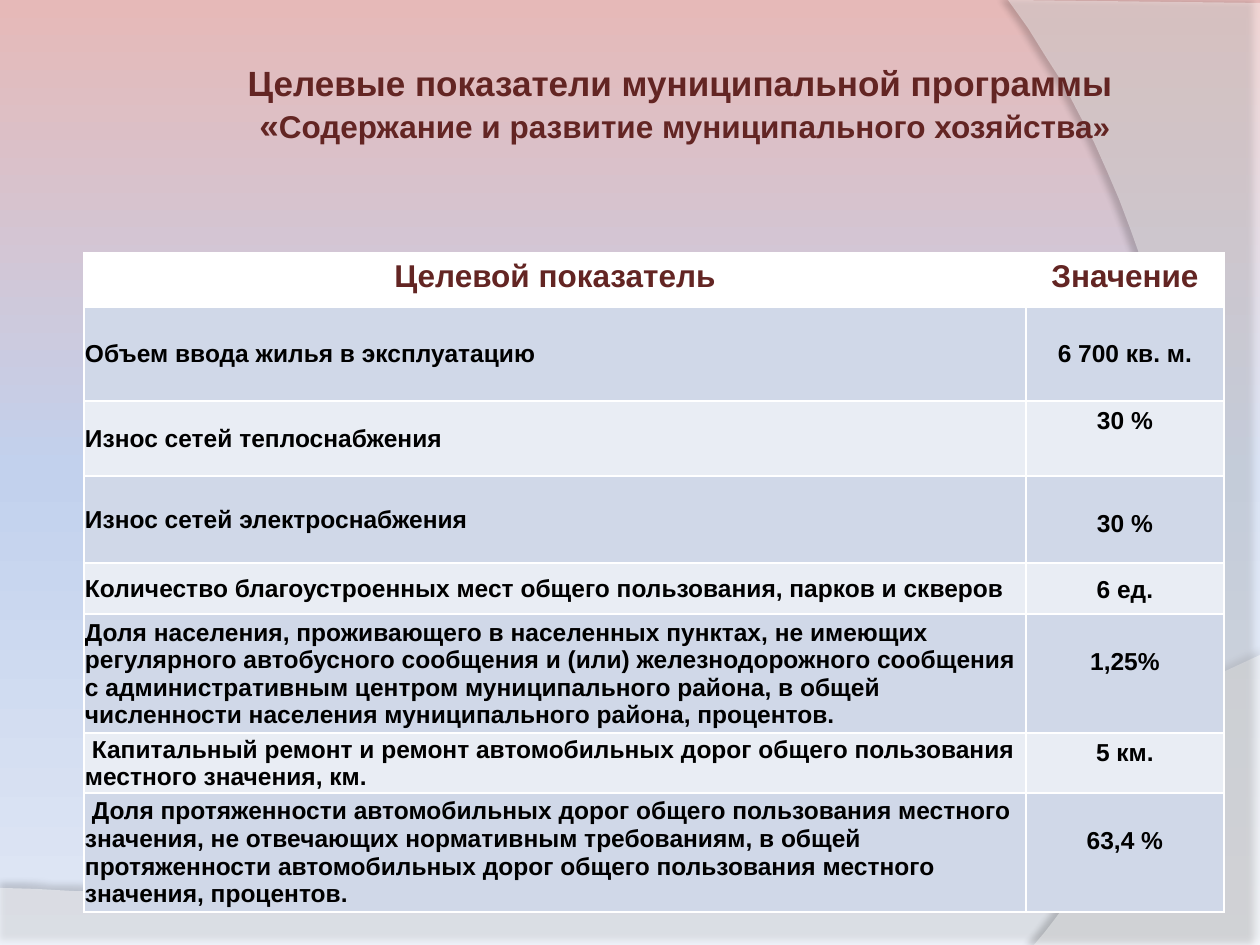
from dataclasses import dataclass
from copy import deepcopy
from lxml.etree import SubElement
from pptx import Presentation
from pptx.dml.color import RGBColor
from pptx.enum.text import MSO_ANCHOR as Anchor, MSO_AUTO_SIZE as AutoSize, PP_ALIGN as Align
from pptx.oxml import parse_xml
from pptx.oxml.ns import nsdecls, qn
from pptx.util import Pt

PX = 914400 // 126
WIDTH, HEIGHT = 1260, 945


@dataclass(frozen=True)
class Theme:
    """Colours and type sizes of the slide."""
    font: str = "Arial"
    heading: str = "632523"
    body: str = "000000"
    white: str = "FFFFFF"
    bands: tuple = ("D0D8E8", "E9EDF4")
    sky: tuple = ((0, "E6B9B8"), (0.5, "C2D1ED"), (1, "E1E8F5"))
    title_size: int = 20
    heading_size: int = 18
    body_size: int = 14


THEME = Theme()
TOP, LOWERED, MIDDLE = "top", "lowered", "middle"
HEADER = ("Целевой показатель", "Значение")
HEADER_HEIGHT = 53
COLUMNS = (942, 198)
INDICATORS = (
    ("Объем ввода жилья в эксплуатацию", "6 700 кв. м.", 95, LOWERED),
    ("Износ сетей теплоснабжения", "30 %", 75, TOP),
    ("Износ сетей электроснабжения", "30 %", 87, LOWERED),
    ("Количество благоустроенных мест общего пользования, парков и скверов",
     "6 ед.", 51, MIDDLE),
    ("Доля населения, проживающего в населенных пунктах, не имеющих регулярного "
     "автобусного сообщения и (или) железнодорожного сообщения с административным "
     "центром муниципального района, в общей численности населения муниципального "
     "района, процентов.", "1,25%", 119, LOWERED),
    (" Капитальный ремонт и ремонт автомобильных дорог общего пользования местного "
     "значения, км.", "5 км.", 60, TOP),
    (" Доля протяженности автомобильных дорог общего пользования местного значения, "
     "не отвечающих нормативным требованиям, в общей протяженности автомобильных "
     "дорог общего пользования местного значения, процентов.", "63,4 %", 119, LOWERED),
)


def style_run(run, size, color):
    """Make a run bold in the theme font."""
    run.font.name, run.font.size, run.font.bold = THEME.font, Pt(size), True
    run.font.color.rgb = RGBColor.from_string(color)


def paint_background(slide):
    """Fill the background with the vertical gradient."""
    fill = slide.background.fill
    fill.gradient()
    fill.gradient_angle = 270
    stop_list = fill._fill._gradFill.gsLst
    stop_list.insert(1, deepcopy(stop_list[0]))
    for stop, (position, color) in zip(fill.gradient_stops, THEME.sky):
        stop.position = position
        stop.color.rgb = RGBColor.from_string(color)


def bezier(start, first, second, end, steps=40):
    """Return points along a cubic curve."""
    return [tuple((1 - t) ** 3 * a + 3 * (1 - t) ** 2 * t * b
                  + 3 * (1 - t) * t ** 2 * c + t ** 3 * d
                  for a, b, c, d in zip(start, first, second, end))
            for t in (i / steps for i in range(steps + 1))]


def add_wave(slide, points, opacity, shade, blur, distance, direction):
    """Add a translucent white wave with a shadow behind the content."""
    builder = slide.shapes.build_freeform(*points[0], scale=PX)
    builder.add_line_segments(points[1:], close=True)
    wave = builder.convert_to_shape()
    wave.fill.solid()
    wave.fill.fore_color.rgb = RGBColor.from_string(THEME.white)
    color = wave._element.spPr.find(qn("a:solidFill"))[0]
    SubElement(color, qn("a:alpha"), val=str(opacity * 1000))
    wave.line.fill.background()
    wave._element.spPr.append(parse_xml(
        f'<a:effectLst {nsdecls("a")}><a:outerShdw blurRad="{Pt(blur)}" '
        f'dist="{Pt(distance)}" dir="{direction * 60000}" algn="ctr" rotWithShape="0">'
        f'<a:srgbClr val="000000"><a:alpha val="{shade * 1000}"/></a:srgbClr>'
        '</a:outerShdw></a:effectLst>'))
    slide.shapes._spTree.insert(2, wave._element)


def add_title(slide):
    """Fill and place the two-line title."""
    title = slide.shapes.title
    title.left, title.top, title.width, title.height = (
        n * PX for n in (54, 55, 1262, 97))
    frame = title.text_frame
    frame.text = "Целевые показатели муниципальной программы \n«"
    frame.word_wrap, frame.auto_size = True, AutoSize.SHAPE_TO_FIT_TEXT
    frame.vertical_anchor = Anchor.MIDDLE
    for paragraph in frame.paragraphs:
        paragraph.alignment = Align.CENTER
        style_run(paragraph.runs[0], THEME.title_size, THEME.heading)
    program = frame.paragraphs[1].add_run()
    program.text = "Содержание и развитие муниципального хозяйства»"
    style_run(program, THEME.heading_size, THEME.heading)


def add_borders(cell, bottom=1):
    """Draw white borders round a cell."""
    properties = cell._tc.get_or_add_tcPr()
    for index, (side, width) in enumerate(zip("LRTB", (1, 1, 1, bottom))):
        properties.insert(index, parse_xml(
            f'<a:ln{side} {nsdecls("a")} w="{Pt(width)}"><a:solidFill>'
            f'<a:srgbClr val="{THEME.white}"/></a:solidFill></a:ln{side}>'))


def fill_cell(cell, text, size, color, band, align=Align.CENTER, bottom=1):
    """Write and format one table cell."""
    cell.text = text
    paragraph = cell.text_frame.paragraphs[0]
    paragraph.alignment = align
    style_run(paragraph.runs[0], size, color)
    cell.fill.solid()
    cell.fill.fore_color.rgb = RGBColor.from_string(band)
    add_borders(cell, bottom)


def place_label(cell):
    """Centre a label vertically with tight margins."""
    cell.vertical_anchor = Anchor.MIDDLE
    cell.margin_left = cell.margin_right = cell.margin_top = PX
    cell.margin_bottom = 0


def place_value(cell, position):
    """Set the vertical position of a value."""
    if position == LOWERED:
        cell.margin_top = 34 * PX
    elif position == MIDDLE:
        cell.vertical_anchor = Anchor.MIDDLE
        cell.margin_top = cell.margin_bottom = 0
        cell.text_frame.paragraphs[0].line_spacing = 1.15


def add_indicators(slide):
    """Add the table of indicators and values."""
    heights = [HEADER_HEIGHT] + [height for _, _, height, _ in INDICATORS]
    table = slide.shapes.add_table(
        len(heights), len(COLUMNS), 84 * PX, 253 * PX,
        sum(COLUMNS) * PX, sum(heights) * PX).table
    for column, width in zip(table.columns, COLUMNS):
        column.width = width * PX
    for row, height in zip(table.rows, heights):
        row.height = height * PX
    for column, heading in enumerate(HEADER):
        fill_cell(table.cell(0, column), heading, THEME.heading_size,
                  THEME.heading, THEME.white, bottom=3)
    for index, (label, value, _, position) in enumerate(INDICATORS):
        band = THEME.bands[index % 2]
        label_cell, value_cell = (table.cell(index + 1, column) for column in (0, 1))
        fill_cell(label_cell, label, THEME.body_size, THEME.body, band, Align.LEFT)
        place_label(label_cell)
        fill_cell(value_cell, value, THEME.body_size, THEME.body, band)
        place_value(value_cell, position)


def main():
    """Build and save the slide."""
    deck = Presentation()
    deck.slide_width, deck.slide_height = WIDTH * PX, HEIGHT * PX
    slide = deck.slides.add_slide(deck.slide_layouts[5])
    paint_background(slide)
    side_curve = bezier((1034, 945), (1178, 780), (1283, 378), (1008, 0))
    add_wave(slide, [(1260, 3), (1260, 945)] + side_curve, 40, 45, 4, 4, 180)
    floor_curve = bezier((1260, 655), (704, 919), (493, 906), (0, 888))
    add_wave(slide, [(0, 946), (1260, 946)] + floor_curve, 45, 35, 4, 3.5, 270)
    add_title(slide)
    add_indicators(slide)
    deck.save("out.pptx")


if __name__ == "__main__":
    main()
